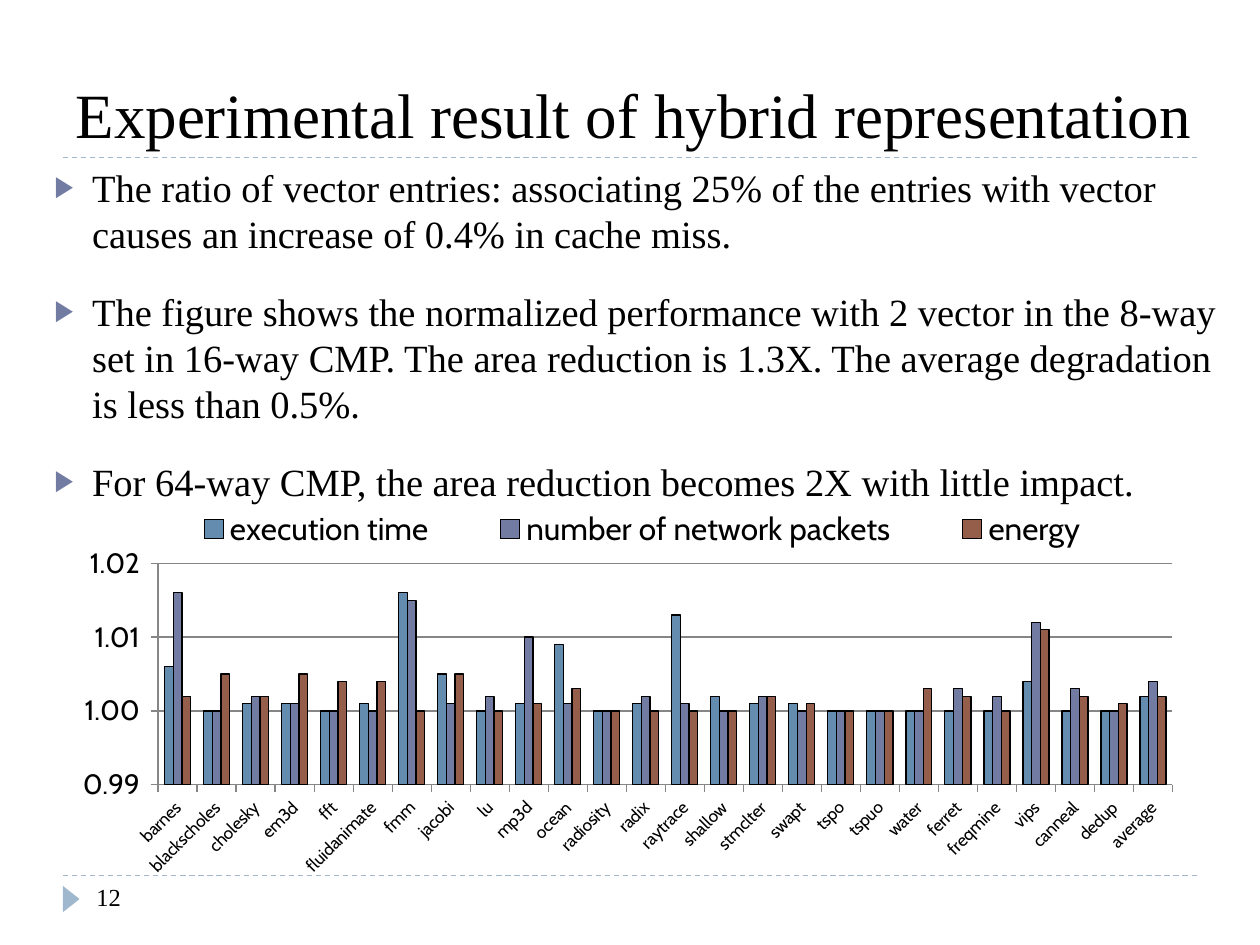
"""Build the slide on the experimental result of the hybrid representation."""
from dataclasses import dataclass

from lxml import etree
from pptx import Presentation
from pptx.chart.data import CategoryChartData
from pptx.dml.color import RGBColor
from pptx.enum import chart as charts, dml, shapes, text
from pptx.oxml import ns, parse_xml
from pptx.util import Pt

SERIF = "Times New Roman"
CATEGORIES = (
    "barnes blackscholes cholesky em3d fft fluidanimate fmm jacobi lu mp3d ocean radiosity radix "
    "raytrace shallow stmclter swapt tspo tspuo water ferret freqmine vips canneal dedup average"
).split()
BULLETS = [
    "The ratio of vector entries: associating 25% of the entries with vector causes an increase "
    "of 0.4% in cache miss.",
    "The figure shows the normalized performance with 2 vector in the 8-way set in 16-way CMP. "
    "The area reduction is 1.3X. The average degradation is less than 0.5%.",
    "For 64-way CMP, the area reduction becomes 2X with little impact.",
]


@dataclass
class Measure:
    """A chart series, its values given as thousandths above one."""
    name: str
    color: str
    thousandths: list[int]


MEASURES = [
    Measure("execution time", "638CAE",
            [6, 0, 1, 1, 0, 1, 16, 5, 0, 1, 9, 0, 1, 13, 2, 1, 1, 0, 0, 0, 0, 0, 4, 0, 0, 2]),
    Measure("number of network packets", "727CA3",
            [16, 0, 2, 1, 0, 0, 15, 1, 2, 10, 1, 0, 2, 1, 0, 2, 0, 0, 0, 0, 3, 2, 12, 3, 0, 4]),
    Measure("energy", "955E4B",
            [2, 5, 2, 5, 4, 4, 0, 5, 0, 1, 3, 0, 0, 0, 0, 2, 1, 0, 0, 3, 2, 0, 11, 2, 1, 2]),
]


def rgb(color: str) -> RGBColor:
    """Turn a hex string into a colour."""
    return RGBColor.from_string(color)


def set_font(font, size: float, name: str = SERIF) -> None:
    """Set a black font of the given size."""
    font.name, font.size, font.bold = name, Pt(size), False
    font.color.rgb = rgb("000000")


def add_rule(slide, y: float) -> None:
    """Draw a dashed rule across the slide."""
    rule = slide.shapes.add_connector(shapes.MSO_CONNECTOR.STRAIGHT, Pt(36), Pt(y), Pt(684), Pt(y))
    rule.line.color.rgb = rgb("9FB8CD")
    rule.line.width = Pt(0.75)
    rule.line.dash_style = dml.MSO_LINE.DASH
    etree.SubElement(rule._element.spPr, ns.qn("a:effectLst"))


def add_text(slide, left: float, top: float, width: float, height: float):
    """Add a wrapping text box and return its text frame."""
    frame = slide.shapes.add_textbox(Pt(left), Pt(top), Pt(width), Pt(height)).text_frame
    frame.word_wrap = True
    return frame


def add_bullets(slide) -> None:
    """Write the bulleted statements."""
    frame = add_text(slide, 24, 90, 678, 402)
    for index, statement in enumerate(BULLETS):
        paragraph = frame.paragraphs[0] if index == 0 else frame.add_paragraph()
        paragraph.text = statement
        paragraph.space_before = Pt(18 if index else 6)
        set_font(paragraph.font, 22)
        properties = paragraph._p.get_or_add_pPr()
        properties.set("marL", str(Pt(21.6)))
        properties.set("indent", str(Pt(-21.6)))
        bullet = parse_xml(
            f'<a:pPr {ns.nsdecls("a")}><a:buClr><a:srgbClr val="727CA3"/></a:buClr>'
            '<a:buSzPct val="76000"/><a:buFont typeface="Arial"/><a:buChar char="▶"/></a:pPr>')
        defaults = properties.find(ns.qn("a:defRPr"))
        for element in list(bullet):
            defaults.addprevious(element)


def place(x: float, y: float, width: float, height: float, inner: bool = False):
    """Return a manual chart layout in fractions of the chart."""
    target = '<c:layoutTarget val="inner"/>' if inner else ""
    return parse_xml(
        f'<c:layout {ns.nsdecls("c")}><c:manualLayout>{target}'
        '<c:xMode val="edge"/><c:yMode val="edge"/>'
        f'<c:x val="{x}"/><c:y val="{y}"/><c:w val="{width}"/><c:h val="{height}"/>'
        '</c:manualLayout></c:layout>')


def add_performance_chart(slide) -> None:
    """Add the clustered column chart of normalized performance."""
    data = CategoryChartData()
    data.categories = CATEGORIES
    for measure in MEASURES:
        data.add_series(measure.name, [round(1 + n / 1000, 3) for n in measure.thousandths])
    chart = slide.shapes.add_chart(charts.XL_CHART_TYPE.COLUMN_CLUSTERED, Pt(30), Pt(288),
                                   Pt(642), Pt(219), data).chart
    set_font(chart.font, 6, "Cabin")
    chart.has_title = False
    plot = chart.plots[0]
    plot.gap_width, plot.overlap, plot.vary_by_categories = 150, 0, False
    for series, measure in zip(plot.series, MEASURES):
        series.format.fill.solid()
        series.format.fill.fore_color.rgb = rgb(measure.color)
        series.format.line.color.rgb = rgb("000000")
        series.format.line.width = Pt(0.75)

    category_axis, value_axis = chart.category_axis, chart.value_axis
    for axis, size in ((category_axis, 10), (value_axis, 16)):
        set_font(axis.tick_labels.font, size, "Cabin")
        axis.major_tick_mark = charts.XL_TICK_MARK.OUTSIDE
        axis.format.line.color.rgb = rgb("868686")
    category_axis.tick_label_position = charts.XL_TICK_LABEL_POSITION.LOW
    category_axis._element.txPr.find(ns.qn("a:bodyPr")).set("rot", "-2700000")
    value_axis.minimum_scale, value_axis.maximum_scale = 0.99, 1.02
    value_axis.major_unit = 0.01
    value_axis.crosses = charts.XL_AXIS_CROSSES.MINIMUM
    value_axis.tick_labels.number_format = r"#,##0.00_);[Red]\(#,##0.00\)"
    value_axis.tick_labels.number_format_is_linked = False
    value_axis.major_gridlines.format.line.color.rgb = rgb("868686")

    chart.has_legend = True
    legend = chart.legend
    legend.position = charts.XL_LEGEND_POSITION.TOP
    legend.include_in_layout = False
    set_font(legend.font, 18, "Cabin")
    legend_element = legend._element
    for layout in legend_element.findall(ns.qn("c:layout")):
        legend_element.remove(layout)
    legend_element.find(ns.qn("c:legendPos")).addnext(place(0.08, 0.01, 0.89, 0.11))
    plot_area = chart._chartSpace.chart.plotArea
    for layout in plot_area.findall(ns.qn("c:layout")):
        plot_area.remove(layout)
    plot_area.insert(0, place(0.094, 0.155, 0.903, 0.578, inner=True))


def main() -> None:
    """Build and save the presentation."""
    presentation = Presentation()
    presentation.slide_width, presentation.slide_height = Pt(720), Pt(540)
    slide = presentation.slides.add_slide(presentation.slide_layouts[5])
    for y in (500.4, 90):
        add_rule(slide, y)
    marker = slide.shapes.add_shape(shapes.MSO_SHAPE.ISOSCELES_TRIANGLE,
                                    Pt(33.2), Pt(509), Pt(15), Pt(9.5))
    marker.rotation = 90
    marker.shadow.inherit = False
    marker.fill.solid()
    marker.fill.fore_color.rgb = rgb("9FB8CD")
    marker.line.fill.background()

    title = slide.shapes.title
    title.left, title.top, title.width, title.height = Pt(36), Pt(12), Pt(684), Pt(78)
    title.text_frame.text = "Experimental result of hybrid representation"
    title.text_frame.vertical_anchor = text.MSO_ANCHOR.BOTTOM
    heading = title.text_frame.paragraphs[0]
    heading.alignment = text.PP_ALIGN.LEFT
    set_font(heading.font, 36)

    number = add_text(slide, 48, 500.4, 156, 28.8).paragraphs[0]
    number.text = "12"
    set_font(number.font, 14)
    add_bullets(slide)
    add_performance_chart(slide)
    presentation.save("out.pptx")


if __name__ == "__main__":
    main()
